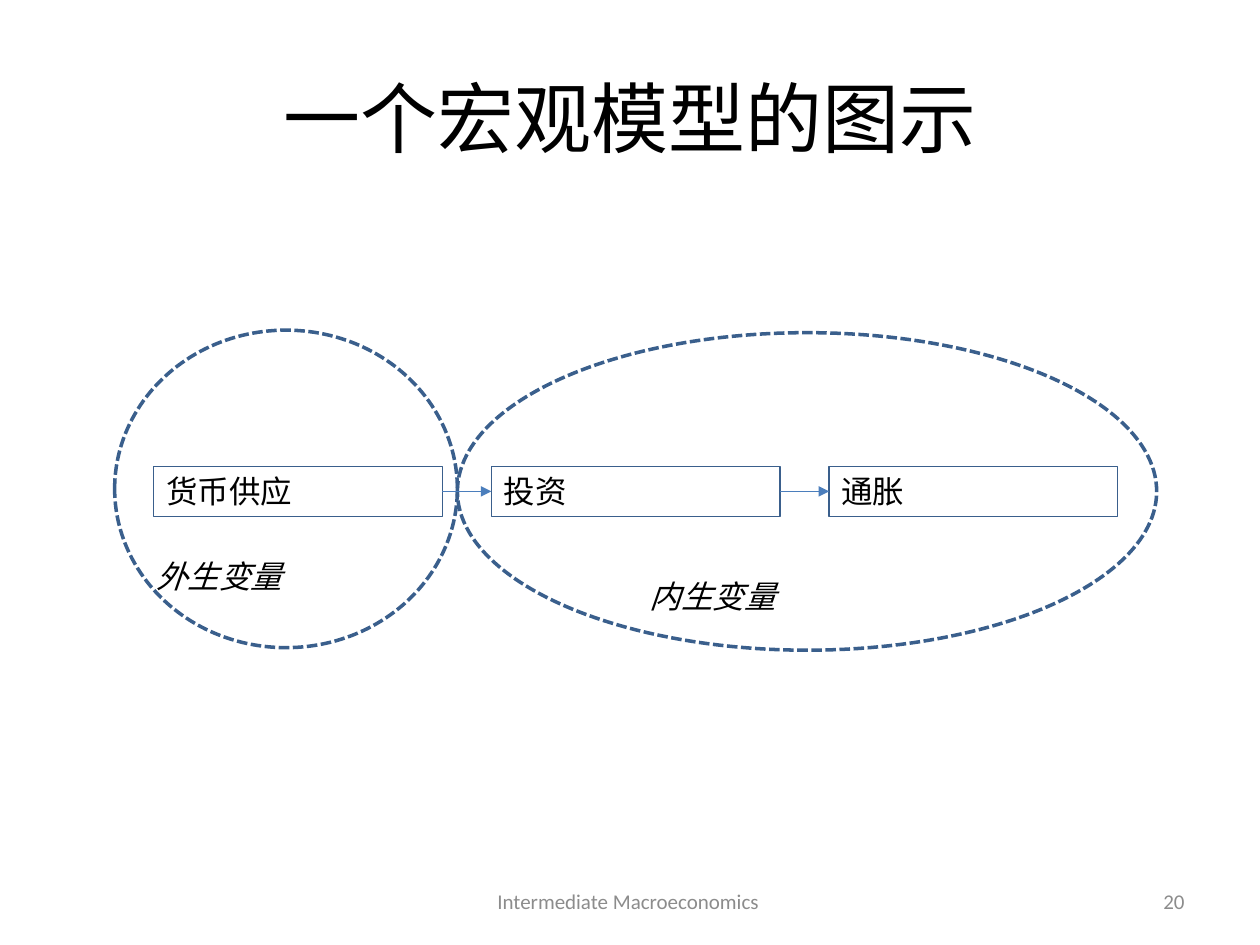
from lxml import etree
from pptx import Presentation
from pptx.dml.color import RGBColor
from pptx.enum import dml, shapes, text
from pptx.oxml.ns import qn
from pptx.util import Inches, Pt

BLACK, GREY, OUTLINE, ARROW = "000000", "8C8C8C", "3A5F8C", "4B7EBC"
ALIGN = text.PP_ALIGN
TOP, MIDDLE = text.MSO_ANCHOR.TOP, text.MSO_ANCHOR.MIDDLE


def rgb(value):
    """Turn a hex string into a colour."""
    return RGBColor.from_string(value)


def write(sp, words, size=18, color=BLACK, align=ALIGN.LEFT, anchor=TOP, italic=None):
    """Set and format the text of a shape."""
    tf = sp.text_frame
    tf.text = words
    tf.word_wrap = True
    tf.vertical_anchor = anchor
    p = tf.paragraphs[0]
    p.alignment = align
    font = p.runs[0].font
    font.name, font.size, font.italic = "Calibri", Pt(size), italic
    font.color.rgb = rgb(color)


def add_text(s, words, x, y, w, h, **style):
    """Add a text box."""
    write(s.shapes.add_textbox(Inches(x), Inches(y), Inches(w), Inches(h)), words, **style)


def add_outline(s, kind, x, y, w, h, width):
    """Add an unfilled shape with a coloured outline."""
    sp = s.shapes.add_shape(kind, Inches(x), Inches(y), Inches(w), Inches(h))
    sp.shadow.inherit = False
    sp.fill.background()
    sp.line.color.rgb = rgb(OUTLINE)
    sp.line.width = Pt(width)
    return sp


def add_group_ellipse(s, x, y, w, h):
    """Add a dashed ellipse around a group of variables."""
    sp = add_outline(s, shapes.MSO_SHAPE.OVAL, x, y, w, h, 2)
    sp.line.dash_style = dml.MSO_LINE.SQUARE_DOT


def add_variable(s, words, x, y, w, h):
    """Add a box naming a variable."""
    write(add_outline(s, shapes.MSO_SHAPE.RECTANGLE, x, y, w, h, 0.75), words)


def add_arrow(s, x1, y1, x2, y2):
    """Add an arrow between two points."""
    c = s.shapes.add_connector(
        shapes.MSO_CONNECTOR.STRAIGHT, Inches(x1), Inches(y1), Inches(x2), Inches(y2))
    c.line.color.rgb = rgb(ARROW)
    c.line.width = Pt(0.75)
    etree.SubElement(c.line._get_or_add_ln(), qn("a:tailEnd"), type="triangle")
    etree.SubElement(c._element.spPr, qn("a:effectLst"))


def main():
    """Build the slide and save it."""
    prs = Presentation()
    prs.slide_width, prs.slide_height = Inches(10), Inches(7.5)
    s = prs.slides.add_slide(prs.slide_layouts[6])

    add_text(s, "一个宏观模型的图示", 0.5, 0.3, 9, 1.25,
             size=44, align=ALIGN.CENTER, anchor=MIDDLE)
    footer = dict(size=12, color=GREY, anchor=MIDDLE)
    add_text(s, "Intermediate Macroeconomics ", 3.42, 6.95, 3.17, 0.4,
             align=ALIGN.CENTER, **footer)
    add_text(s, "20", 7.17, 6.95, 2.33, 0.4, align=ALIGN.RIGHT, **footer)

    add_group_ellipse(s, 3.63, 2.64, 5.55, 2.52)
    add_group_ellipse(s, 0.91, 2.62, 2.72, 2.52)

    left, top, width, height, step = 1.22, 3.7, 2.29, 0.4, 2.68
    for i, name in enumerate(["货币供应", "投资", "通胀"]):
        x = left + i * step
        add_variable(s, name, x, top, width, height)
        if i:
            add_arrow(s, x - step + width, top + height / 2, x, top + height / 2)

    add_text(s, "内生变量", 5.06, 4.53, 2.83, 0.4, italic=True)
    add_text(s, "外生变量", 1.14, 4.37, 2.83, 0.4, italic=True)
    prs.save("out.pptx")


if __name__ == "__main__":
    main()
